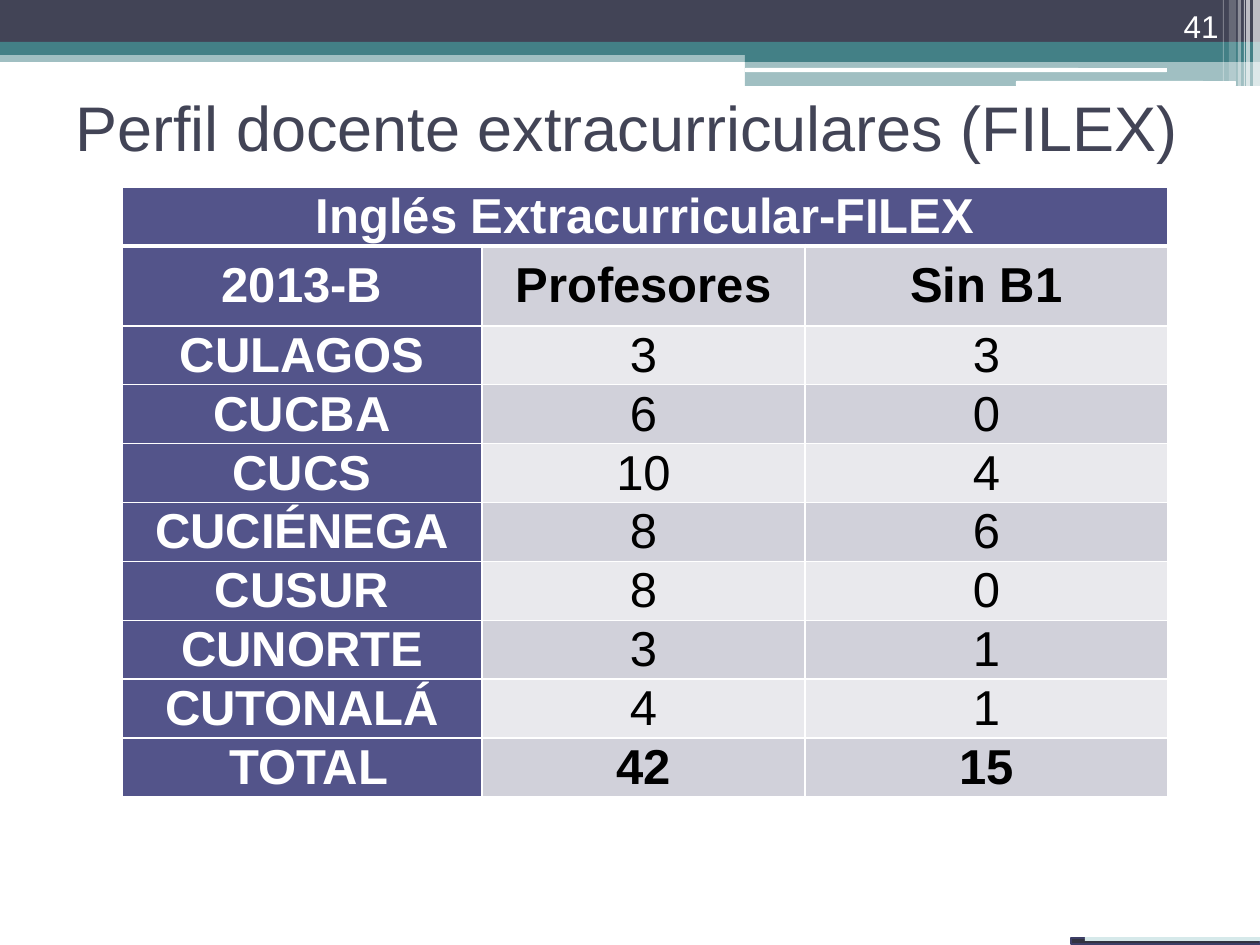
import lxml.etree
import pptx
import pptx.dml.color
import pptx.enum.shapes
import pptx.enum.text
import pptx.oxml.ns
import pptx.util

PX = 914400 / 126
SHAPE = pptx.enum.shapes.MSO_SHAPE
ALIGN = pptx.enum.text.PP_ALIGN
ANCHOR = pptx.enum.text.MSO_ANCHOR
qn = pptx.oxml.ns.qn


def paint(target, color, alpha=100):
    """Give a fill, or a font through its fill, a solid colour of alpha percent opacity."""
    target.solid()
    target.fore_color.rgb = pptx.dml.color.RGBColor.from_string(color)
    if alpha < 100:
        clr = target._xPr.find(".//" + qn("a:srgbClr"))
        lxml.etree.SubElement(clr, qn("a:alpha"), val=str(alpha * 1000))


def emu(*lengths):
    return [pptx.util.Emu(round(n * PX)) for n in lengths]


prs = pptx.Presentation()
prs.slide_width, prs.slide_height = emu(1260, 945)
s = prs.slides.add_slide(prs.slide_layouts[6])
footer = s.shapes.add_group_shape()

# Header bands, rules and side stripes, then the footer bar
RECT, ROUND = SHAPE.RECTANGLE, SHAPE.ROUNDED_RECTANGLE
bands = [
    (s, RECT, (0, 50, 1260, 12), "438086", 50),
    (s, RECT, (0, 0, 1260, 42), "424456", 100),
    (s, RECT, (0, 42, 1260, 13), "438086", 100),
    (s, RECT, (745, 49, 515, 13), "438086", 100),
    (s, RECT, (745, 61, 515, 25), "438086", 50),
    (s, ROUND, (745, 68, 422, 4), "FFFFFF", 100),
    (s, ROUND, (1016, 81, 220, 5), "FFFFFF", 100),
    (s, RECT, (1253, 0, 7, 86), "FFFFFF", 65),
    (s, RECT, (1246, 0, 4, 86), "FFFFFF", 65),
    (s, RECT, (1244, 0, 1, 86), "FFFFFF", 60),
    (s, RECT, (1238, 0, 3, 86), "FFFFFF", 40),
    (s, RECT, (1229, 0, 7, 81), "FFFFFF", 20),
    (s, RECT, (1223, 0, 1, 81), "FFFFFF", 30),
    (footer, RECT, (1071, 938, 189, 6), "323341", 100),
    (footer, RECT, (1085, 937, 175, 4), "D6E9EA", 100),
]
for parent, kind, box, color, alpha in bands:
    sp = parent.shapes.add_shape(kind, *emu(*box))
    sp.shadow.inherit = False
    paint(sp.fill, color, alpha)
    sp.line.fill.background()

bar = footer.shapes[0]
paint(bar.line.fill, "3D3E66")
bar.line.width = pptx.util.Pt(1.5)

# Title and slide number
texts = [
    ("Perfil docente extracurriculares (FILEX)", (63, 53, 1134, 147), 36, "424456",
     ALIGN.LEFT, ANCHOR.MIDDLE),
    ("41", (1126, 0, 105, 51), 18, "FFFFFF", ALIGN.RIGHT, ANCHOR.BOTTOM),
]
for text, box, size, color, align, anchor in texts:
    tf = s.shapes.add_textbox(*emu(*box)).text_frame
    tf.word_wrap = True
    tf.vertical_anchor = anchor
    p = tf.paragraphs[0]
    p.text = text
    p.alignment = align
    p.font.name = "Arial"
    p.font.size = pptx.util.Pt(size)
    paint(p.font.fill, color)

# Table of teachers per campus
rows = [
    ("Inglés Extracurricular-FILEX", "", ""),
    ("2013-B", "Profesores", "Sin B1"),
    ("CULAGOS", "3", "3"),
    ("CUCBA", "6", "0"),
    ("CUCS", "10", "4"),
    ("CUCIÉNEGA", "8", "6"),
    ("CUSUR", "8", "0"),
    ("CUNORTE", "3", "1"),
    ("CUTONALÁ", "4", "1"),
    (" TOTAL", "42", "15"),
]
widths = [360, 323, 363]
heights = [58, 80] + [58] * 8
table = s.shapes.add_table(len(rows), len(widths),
                           *emu(122, 187, sum(widths), sum(heights))).table
table.first_row = table.horz_banding = False
for col, width in zip(table.columns, emu(*widths)):
    col.width = width
for row, height in zip(table.rows, emu(*heights)):
    row.height = height
table.cell(0, 0).merge(table.cell(0, 2))

for i, row in enumerate(rows):
    for j, text in enumerate(row):
        cell = table.cell(i, j)
        head = i == 0 or j == 0
        cell.margin_left, cell.margin_right = emu(6, 6)
        cell.margin_top = cell.margin_bottom = 0
        cell.vertical_anchor = ANCHOR.MIDDLE
        paint(cell.fill, "53548A" if head else "D1D1DA" if i % 2 else "E9E9ED")

        p = cell.text_frame.paragraphs[0]
        p.text = text
        p.alignment = ALIGN.CENTER
        p.line_spacing = 1.0
        p.font.name = "Arial"
        p.font.size = pptx.util.Pt(28)
        p.font.bold = head or i in (1, len(rows) - 1)
        paint(p.font.fill, "FFFFFF" if head else "000000")

        tcPr = cell._tc.get_or_add_tcPr()
        for k, side in enumerate(("lnL", "lnR", "lnT", "lnB")):
            thick = (i, side) in ((0, "lnB"), (1, "lnT"))
            ln = lxml.etree.Element(qn("a:" + side), w=str(pptx.util.Pt(3 if thick else 1)))
            fill = lxml.etree.SubElement(ln, qn("a:solidFill"))
            lxml.etree.SubElement(fill, qn("a:srgbClr"), val="FFFFFF")
            tcPr.insert(k, ln)

prs.save("out.pptx")
